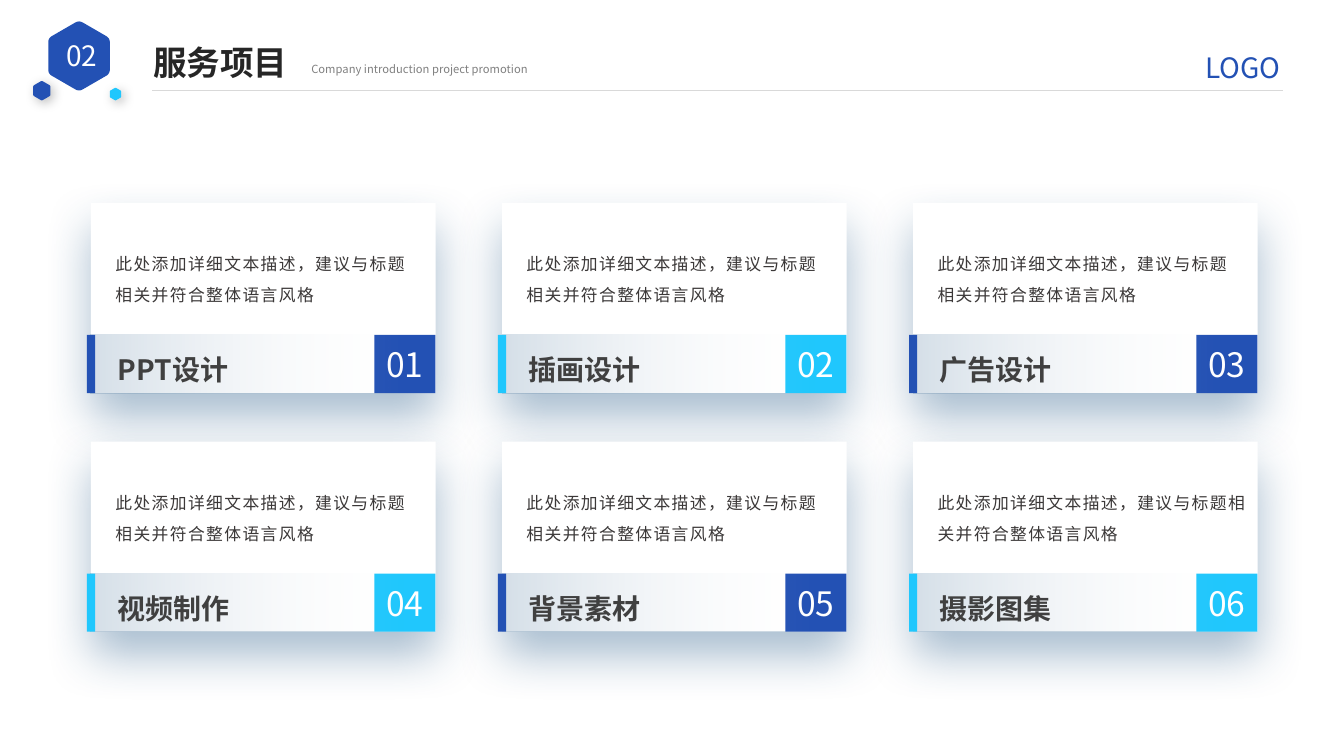
from dataclasses import dataclass
from math import cos, radians, sin

from pptx import Presentation
from pptx.dml.color import RGBColor
from pptx.enum.shapes import MSO_CONNECTOR as CONN, MSO_SHAPE as SHAPE
from pptx.enum.text import MSO_ANCHOR as ANCHOR, MSO_AUTO_SIZE as FIT, PP_ALIGN as ALIGN
from pptx.oxml import parse_xml
from pptx.oxml.ns import nsdecls
from pptx.slide import Slide
from pptx.util import Pt

COLORS = {
    "blue": "2351B4", "cyan": "20C7FD", "white": "FFFFFF", "steel": "275B89",
    "title": "262626", "heading": "404040", "body": "3B3838",
    "subtitle": "808080", "rule": "D9D9D9", "black": "000000",
}
BODY = "此处添加详细文本描述，建议与标题相关并符合整体语言风格"
SERVICES = ["PPT设计", "插画设计", "广告设计", "视频制作", "背景素材", "摄影图集"]
ACCENTS = ["blue", "cyan", "blue", "cyan", "blue", "cyan"]
CARD_SHADOW = ("steel", 40, 34, 17, 90)
DOT_SHADOW = ("black", 25, 8, 3, 45)


def rgb(name):
    """Return the named colour."""
    return RGBColor.from_string(COLORS[name])


def xml(tag, **attrs):
    """Return an empty DrawingML element."""
    pairs = " ".join(f'{k}="{v}"' for k, v in attrs.items())
    return parse_xml(f"<a:{tag} {nsdecls('a')} {pairs}/>")


@dataclass
class Deck:
    """Slide under construction and its type style."""
    s: Slide
    font: str = "Noto Sans CJK SC"

    def label(self, sp, text, size, color, bold=False, align=ALIGN.LEFT,
              leading=None, tracking=0, anchor=ANCHOR.TOP, wrap=True, insets=(7.2, 3.6)):
        """Put one styled paragraph into a shape."""
        tf = sp.text_frame
        tf.auto_size, tf.word_wrap, tf.vertical_anchor = FIT.NONE, wrap, anchor
        tf.margin_left = tf.margin_right = Pt(insets[0])
        tf.margin_top = tf.margin_bottom = Pt(insets[1])
        p = tf.paragraphs[0]
        p.text, p.alignment = text, align
        p.line_spacing = Pt(leading or round(size * 1.2))
        f = p.font
        f.size, f.bold, f.name = Pt(size), bold, self.font
        f.color.rgb = rgb(color)
        props = p._p.pPr.find(xml("defRPr").tag)
        props.append(xml("ea", typeface=self.font))
        if tracking:
            props.set("spc", str(tracking * 100))

    def title(self, x, y, w, h, text):
        """Place the slide title."""
        sp = self.s.shapes.title
        sp.left, sp.top, sp.width, sp.height = Pt(x), Pt(y), Pt(w), Pt(h)
        self.label(sp, text, 24, "title", bold=True)

    def text(self, x, y, w, h, text, size, color, **style):
        """Add a text box."""
        sp = self.s.shapes.add_textbox(Pt(x), Pt(y), Pt(w), Pt(h))
        self.label(sp, text, size, color, **style)

    def paint(self, sp, color, shadow=None):
        """Fill a shape flat, with an optional outer shadow."""
        sp.fill.solid()
        sp.fill.fore_color.rgb = rgb(color)
        sp.line.fill.background()
        sp.shadow.inherit = False
        if shadow:
            tint, alpha, blur, dist, angle = shadow
            outer = xml("outerShdw", blurRad=Pt(blur), dist=Pt(dist),
                        dir=angle * 60000, algn="ctr", rotWithShape=0)
            clr = xml("srgbClr", val=COLORS[tint])
            clr.append(xml("alpha", val=alpha * 1000))
            outer.append(clr)
            sp._element.spPr.find(xml("effectLst").tag).append(outer)

    def rect(self, x, y, w, h, color, shadow=None):
        """Add a rectangle."""
        sp = self.s.shapes.add_shape(SHAPE.RECTANGLE, Pt(x), Pt(y), Pt(w), Pt(h))
        self.paint(sp, color, shadow)
        return sp

    def fade(self, x, y, w, h, color, alpha):
        """Add a rectangle that fades out to the right."""
        sp = self.rect(x, y, w, h, color)
        sp.fill.gradient()
        sp.fill.gradient_angle = 180
        for stop, name in zip(sp.fill.gradient_stops, ("white", color)):
            stop.color.rgb = rgb(name)
        for clr, opacity in zip(sp._element.spPr.xpath(".//a:gs/a:srgbClr"), (0, alpha)):
            clr.append(xml("alpha", val=opacity * 1000))

    def hexagon(self, cx, cy, radius, color, shadow=None):
        """Add an upright hexagon with rounded corners."""
        corners = [(cx + radius * cos(radians(a)), cy + radius * sin(radians(a)))
                   for a in range(-90, 270, 60)]
        cut, steps, points = 0.12, 6, []
        for i, (x, y) in enumerate(corners):
            (px, py), (nx, ny) = corners[i - 1], corners[(i + 1) % 6]
            for t in (k / steps for k in range(steps + 1)):
                back, ahead = cut * (1 - t) ** 2, cut * t ** 2
                points.append((Pt(x + back * (px - x) + ahead * (nx - x)),
                               Pt(y + back * (py - y) + ahead * (ny - y))))
        fb = self.s.shapes.build_freeform(*points[0])
        fb.add_line_segments(points[1:], close=True)
        self.paint(fb.convert_to_shape(), color, shadow)

    def rule(self, x1, x2, y):
        """Add a thin horizontal line."""
        ln = self.s.shapes.add_connector(CONN.STRAIGHT, Pt(x1), Pt(y), Pt(x2), Pt(y))
        ln.line.color.rgb, ln.line.width = rgb("rule"), Pt(0.5)
        ln._element.spPr.append(xml("effectLst"))

    def card(self, x, y, number, heading, accent, body_width):
        """Add a service card."""
        bar = y + 94.2
        self.rect(x, y, 246.2, 135.6, "white", CARD_SHADOW)
        badge = self.rect(x + 202.4, bar, 43.6, 41.6, accent)
        self.label(badge, f"{number:02}", 24, "white", align=ALIGN.CENTER,
                   anchor=ANCHOR.MIDDLE, insets=(7.2, 0))
        self.fade(x, bar, 229.7, 41.6, "steel", 20)
        self.rect(x - 2.9, bar, 5.8, 41.6, accent)
        self.text(x + 12, y + 100, 100, 34, heading, 20, "heading", bold=True, leading=27.4)
        self.text(x + 10.4, y + 25.2, body_width, 51, BODY, 12, "body", leading=22, tracking=1)


def main():
    """Build the services slide."""
    prs = Presentation()
    prs.slide_width, prs.slide_height = Pt(960), Pt(540)
    d = Deck(prs.slides.add_slide(prs.slide_layouts[5]))

    d.hexagon(56.5, 40, 25.4, "blue")
    d.text(40.3, 27.5, 36, 24, "02", 20, "white", align=ALIGN.CENTER, wrap=False, insets=(0, 0))
    d.hexagon(82.5, 67.2, 4.6, "cyan", DOT_SHADOW)
    d.rule(108.6, 916.6, 64.8)
    d.text(851.8, 32.5, 72, 31.7, "LOGO", 20, "blue", align=ALIGN.CENTER, wrap=False)
    d.hexagon(29.9, 64.8, 7.1, "blue", DOT_SHADOW)
    d.title(102.2, 26.3, 111.6, 36, "服务项目")
    d.text(215.3, 40.8, 232.6, 17.3, "Company introduction project promotion", 8, "subtitle")

    for i, (heading, accent) in enumerate(zip(SERVICES, ACCENTS)):
        row, col = divmod(i, 3)
        body_width = 237 if i == len(SERVICES) - 1 else 225.4
        d.card(65 + col * 293.6, 145 + row * 170.5, i + 1, heading, accent, body_width)

    prs.save("out.pptx")


if __name__ == "__main__":
    main()
